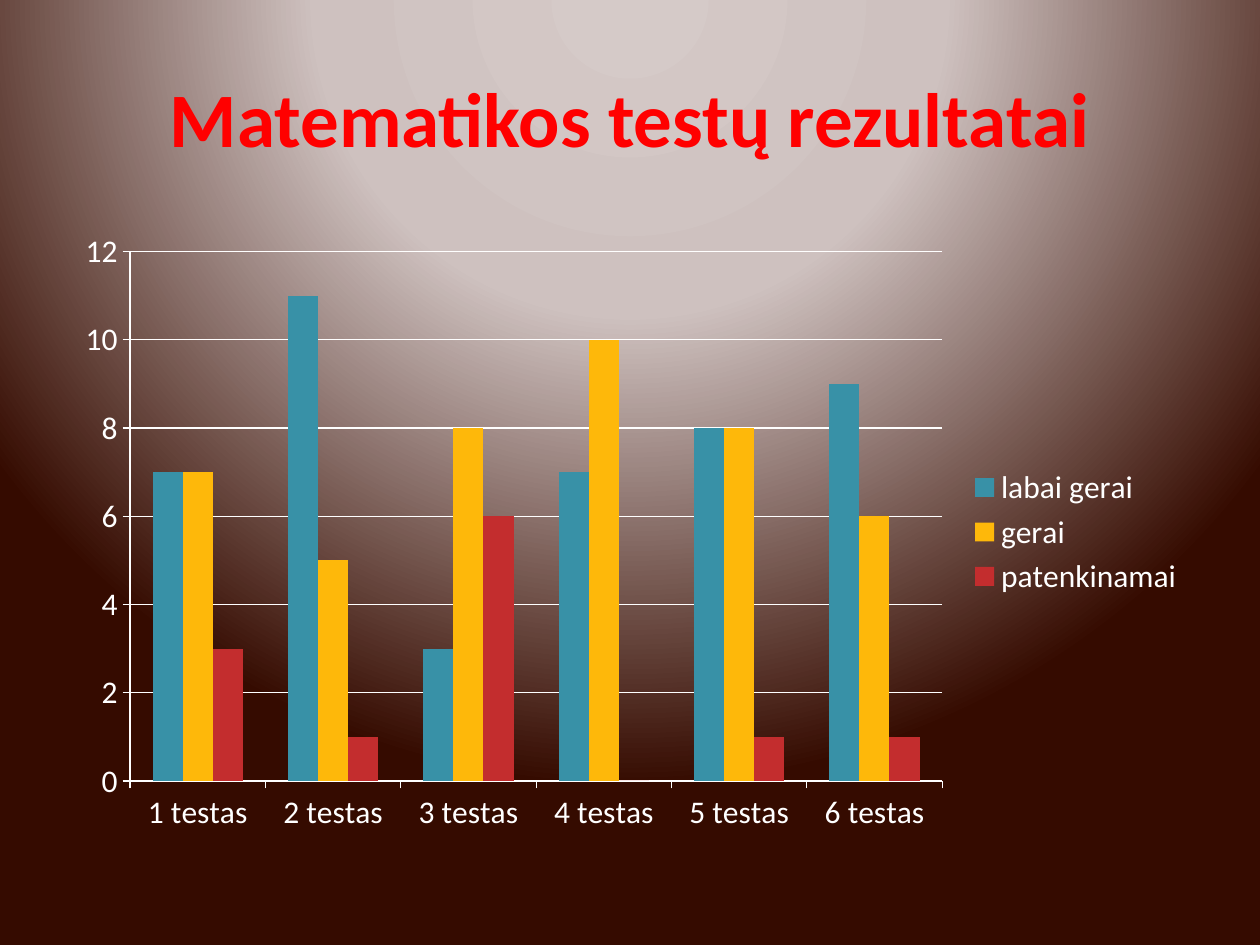
"""Build a slide with a clustered column chart of mathematics test results."""
from typing import NamedTuple

from pptx import Presentation, oxml, util as u
from pptx.chart import data as cd
from pptx.dml import color as dc
from pptx.enum import chart as ec, text as et
from pptx.oxml import ns

COLORS = {
    "title": "FF0000", "white": "FFFFFF", "teal": "3891A7",
    "gold": "FEB80A", "red": "C32D2E",
    "glow": "D5CAC8", "haze": "CEC1BF", "dark": "350B00",
}
FONT = "Calibri"


class Box(NamedTuple):
    left: int
    top: int
    width: int
    height: int


class Series(NamedTuple):
    name: str
    color: str
    vals: tuple[int, ...]


SERIES = (
    Series("labai gerai", "teal", (7, 11, 3, 7, 8, 9)),
    Series("gerai", "gold", (7, 5, 8, 10, 8, 6)),
    Series("patenkinamai", "red", (3, 1, 6, 0, 1, 1)),
)


def px(n: int) -> int:
    return u.Emu(round(n * 914400 / 126))


def rgb(name: str) -> dc.RGBColor:
    return dc.RGBColor.from_string(COLORS[name])


def style(font, *, size: int, color: str, bold: bool = False) -> None:
    font.name, font.size, font.bold = FONT, u.Pt(size), bold
    font.color.rgb = rgb(color)


def write(frame, words: str, *, align=et.PP_ALIGN.CENTER, **form) -> None:
    frame.text = words
    frame.word_wrap = True
    frame.vertical_anchor = et.MSO_ANCHOR.MIDDLE
    line = frame.paragraphs[0]
    line.alignment = align
    style(line.runs[0].font, **form)


def paint(slide) -> None:
    slide.background.fill.gradient()
    old = slide.element.find(".//" + ns.qn("a:gradFill"))
    stops = "".join(
        f'<a:gs pos="{pos * 1000}"><a:srgbClr val="{COLORS[name]}"/></a:gs>'
        for pos, name in ((0, "glow"), (40, "haze"), (100, "dark"))
    )
    new = oxml.parse_xml(
        f'<a:gradFill {ns.nsdecls("a")} rotWithShape="1"><a:gsLst>{stops}</a:gsLst>'
        '<a:path path="circle"><a:fillToRect l="50000" t="-80000" '
        'r="50000" b="180000"/></a:path></a:gradFill>'
    )
    old.getparent().replace(old, new)


def stroke(line) -> None:
    line.color.rgb = rgb("white")
    line.width = u.Pt(0.75)


def plot(slide, box: Box) -> None:
    data = cd.CategoryChartData()
    data.categories = [f"{n} testas" for n in range(1, 7)]
    for item in SERIES:
        data.add_series(item.name, item.vals)
    chart = slide.shapes.add_chart(
        ec.XL_CHART_TYPE.COLUMN_CLUSTERED, *map(px, box), data
    ).chart
    style(chart.font, size=18, color="white")
    chart.has_title = False
    chart.has_legend = True
    chart.legend.position = ec.XL_LEGEND_POSITION.RIGHT
    chart.legend.include_in_layout = False
    for axis in (chart.category_axis, chart.value_axis):
        axis.major_tick_mark = ec.XL_TICK_MARK.OUTSIDE
        axis.minor_tick_mark = ec.XL_TICK_MARK.NONE
        stroke(axis.format.line)
    axis = chart.value_axis
    axis.minimum_scale, axis.maximum_scale, axis.major_unit = 0, 12, 2
    axis.has_major_gridlines = True
    stroke(axis.major_gridlines.format.line)
    bars = chart.plots[0]
    bars.gap_width, bars.overlap, bars.vary_by_categories = 150, 0, False
    for item, row in zip(SERIES, bars.series):
        row.format.fill.solid()
        row.format.fill.fore_color.rgb = rgb(item.color)


def main() -> None:
    deck = Presentation()
    deck.slide_width, deck.slide_height = px(1260), px(945)
    slide = deck.slides.add_slide(deck.slide_layouts[5])
    paint(slide)
    title = slide.shapes.title
    title.left, title.top, title.width, title.height = map(px, Box(63, 38, 1134, 157))
    write(title.text_frame, "Matematikos testų rezultatai",
          size=44, color="title", bold=True)
    plot(slide, Box(63, 220, 1134, 624))
    deck.save("out.pptx")


if __name__ == "__main__":
    main()
